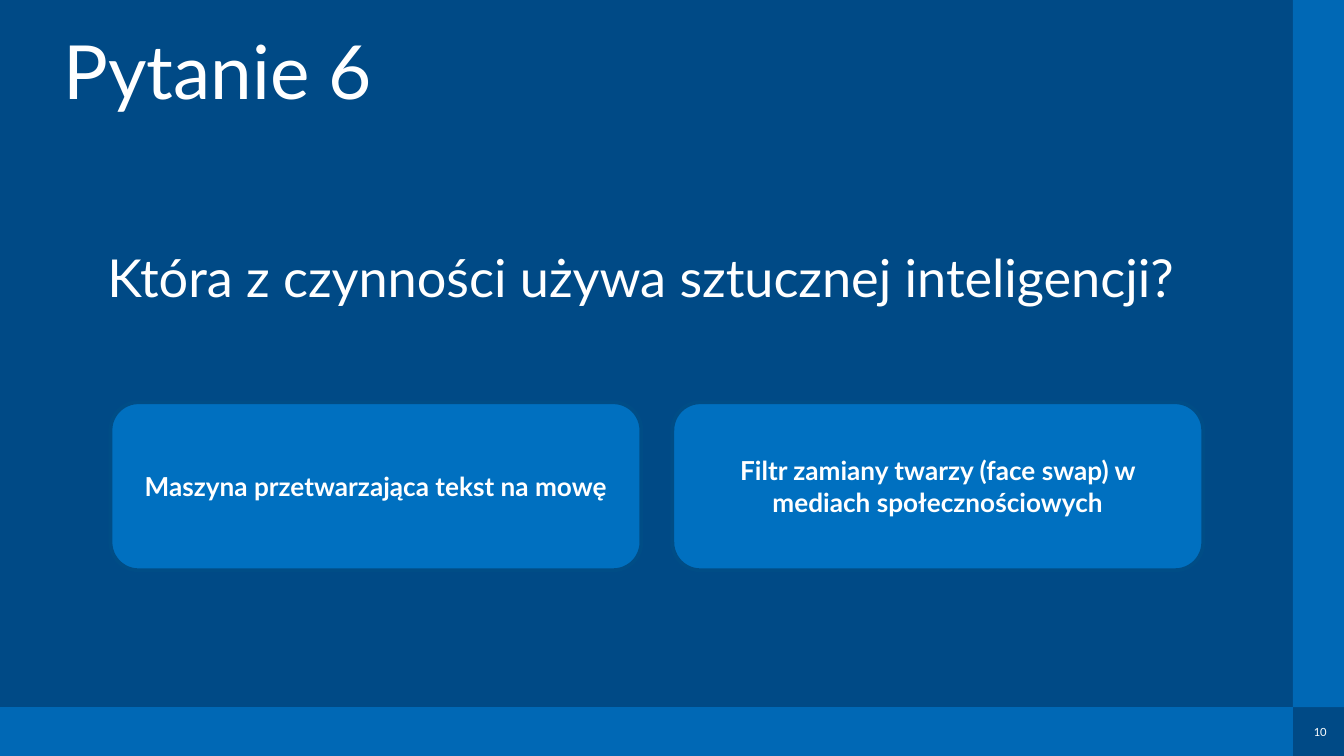
from pptx import Presentation
from pptx.dml.color import RGBColor
from pptx.enum.shapes import MSO_SHAPE as Shape
from pptx.enum.text import MSO_ANCHOR as Anchor, PP_ALIGN as Align
from pptx.util import Pt

COLORS = {
    "background": "004A86",
    "band": "0068B5",
    "answer": "0070C0",
    "outline": "004D86",
    "text": "FFFFFF",
}


class QuizSlide:
    """Hold the quiz style and add elements to the current slide."""

    font_name = "Lato"

    def __init__(self, slide):
        self.slide = slide
        background = slide.background.fill
        background.solid()
        background.fore_color.rgb = self.color("background")

    def color(self, key):
        return RGBColor.from_string(COLORS[key])

    def set_words(self, frame, words, size, bold=False, spacing=None):
        frame.text = words
        frame.word_wrap = True
        frame.vertical_anchor = Anchor.MIDDLE
        paragraph = frame.paragraphs[0]
        paragraph.alignment = Align.CENTER
        paragraph.line_spacing = spacing
        font = paragraph.runs[0].font
        font.name = self.font_name
        font.size = Pt(size)
        font.bold = bold
        font.color.rgb = self.color("text")

    def block(self, kind, box, fill):
        block = self.slide.shapes.add_shape(kind, *map(Pt, box))
        block.shadow.inherit = False
        block.fill.solid()
        block.fill.fore_color.rgb = self.color(fill)
        return block

    def band(self, box):
        self.block(Shape.RECTANGLE, box, "band").line.fill.background()

    def answer(self, box, words):
        answer = self.block(Shape.ROUNDED_RECTANGLE, box, "answer")
        answer.line.color.rgb = self.color("outline")
        answer.line.width = Pt(2)
        self.set_words(answer.text_frame, words, 14, bold=True)

    def label(self, box, words, size, spacing=None, wrap=True):
        frame = self.slide.shapes.add_textbox(*map(Pt, box)).text_frame
        frame.margin_left = frame.margin_right = 0
        frame.margin_top = frame.margin_bottom = 0
        self.set_words(frame, words, size, spacing=spacing)
        frame.word_wrap = wrap


def main():
    width, height = 720, 405
    band_right, band_top = 692.6, 378.8
    answers = [
        "Maszyna przetwarzająca tekst na mowę",
        "Filtr zamiany twarzy (face swap) w mediach społecznościowych",
    ]
    answer_left, answer_step = 59.2, 301

    deck = Presentation()
    deck.slide_width, deck.slide_height = Pt(width), Pt(height)
    quiz = QuizSlide(deck.slides.add_slide(deck.slide_layouts[6]))

    quiz.band((0, band_top, band_right, height - band_top))
    quiz.band((band_right, 0, width - band_right, band_top))
    quiz.label((703.4, 388.5, 7.8, 7.2), "10", 6, wrap=False)
    for column, words in enumerate(answers):
        left = answer_left + column * answer_step
        quiz.answer((left, 215.5, 284.4, 90), words)
    quiz.label((5.8, 8, 221.8, 67.7), "Pytanie 6", 40, spacing=0.8)
    question = "Która z czynności używa sztucznej inteligencji?"
    quiz.label((14.4, 98.6, 657.4, 105.8), question, 28, spacing=0.8)

    deck.save("out.pptx")


if __name__ == "__main__":
    main()
